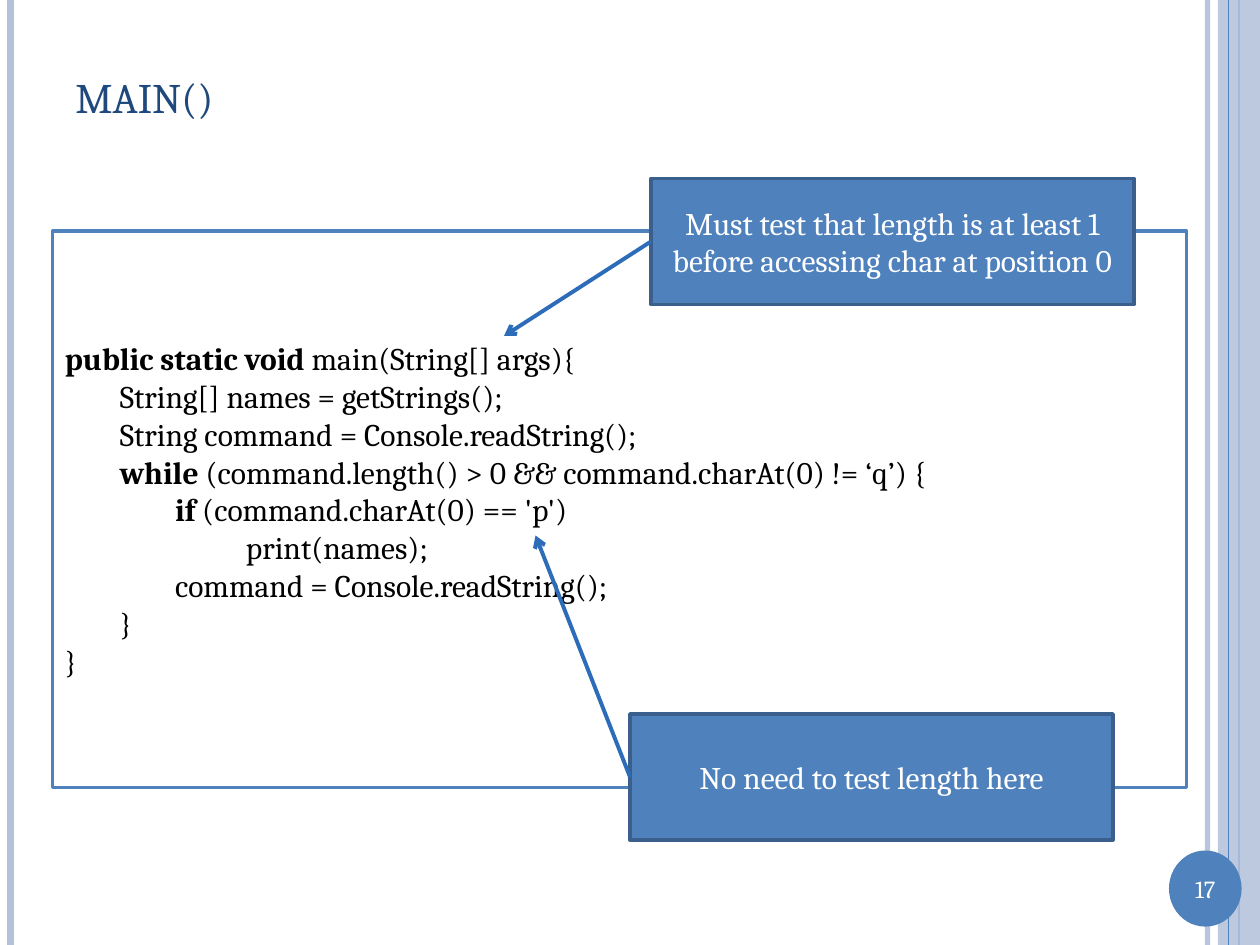
from dataclasses import dataclass

from pptx import Presentation
from pptx import util as u
from pptx.dml.color import RGBColor
from pptx.enum import shapes, text
from pptx.oxml.ns import qn
from lxml import etree

FONT = "Cambria"
COLOURS = {
    "white": "FFFFFF",
    "black": "000000",
    "title": "1F497D",
    "accent": "4F81BD",
    "pale": "B3C1DB",
    "border": "3A5F8C",
    "arrow": "2C6CB9",
}
PAGE_WIDTH, PAGE_HEIGHT = 720, 540


@dataclass
class Area:
    left: float
    top: float
    width: float
    height: float

    def lengths(self) -> list:
        return [u.Pt(n) for n in (self.left, self.top, self.width, self.height)]


@dataclass
class Stripe:
    x: float
    width: float
    colour: str
    opacity: int = 100


@dataclass
class CodeLine:
    indent: float
    keyword: str
    rest: str


@dataclass
class Callout:
    area: Area
    message: str
    target: tuple[float, float]


LEFT_STRIPES = [Stripe(690, 3, "pale", 93), Stripe(6, 4.5, "pale"), Stripe(708, 1.5, "accent")]
FRONT_STRIPE = Stripe(702, 0.75, "accent")
CODE = [
    CodeLine(0, "public static void", " main(String[] args){"),
    CodeLine(31.5, "", "String[] names = getStrings();"),
    CodeLine(31.5, "", "String command = Console.readString();"),
    CodeLine(31.5, "while", " (command.length() > 0 && command.charAt(0) != ‘q’) {"),
    CodeLine(63, "if", " (command.charAt(0) == 'p')"),
    CodeLine(103.5, "", "print(names);"),
    CodeLine(63, "", "command = Console.readString();"),
    CodeLine(31.5, "", "}"),
    CodeLine(0, "", "}"),
]
CALLOUTS = [
    Callout(Area(372, 102, 276, 72),
            "Must test that length is at least 1 before accessing char at position 0", (288, 192)),
    Callout(Area(360, 408, 276, 72), "No need to test length here", (306, 306)),
]


def colour_of(name: str) -> RGBColor:
    return RGBColor.from_string(COLOURS[name])


def set_opacity(element, percent: int) -> None:
    colour = element.find(".//" + qn("a:srgbClr"))
    etree.SubElement(colour, qn("a:alpha")).set("val", str(percent * 1000))


def add_line(page, start: tuple, end: tuple, colour: str, width: float):
    points = [u.Pt(n) for n in (*start, *end)]
    line = page.shapes.add_connector(shapes.MSO_CONNECTOR.STRAIGHT, *points)
    line.line.color.rgb = colour_of(colour)
    line.line.width = u.Pt(width)
    etree.SubElement(line._element.spPr, qn("a:effectLst"))
    return line


def add_stripe(page, stripe: Stripe) -> None:
    line = add_line(page, (stripe.x, 0), (stripe.x, PAGE_HEIGHT), stripe.colour, stripe.width)
    if stripe.opacity < 100:
        set_opacity(line._element.spPr, stripe.opacity)


def add_block(page, kind, area: Area, fill: str, border: str = ""):
    block = page.shapes.add_shape(kind, *area.lengths())
    block.shadow.inherit = False
    block.fill.solid()
    block.fill.fore_color.rgb = colour_of(fill)
    if border:
        block.line.color.rgb = colour_of(border)
        block.line.width = u.Pt(2)
    else:
        block.line.fill.background()
    return block


def style(para, size: float, colour: str, align=text.PP_ALIGN.LEFT) -> None:
    para.alignment = align
    para.font.name = FONT
    para.font.size = u.Pt(size)
    para.font.color.rgb = colour_of(colour)


def add_label(page, area: Area, words: str, size: float, colour: str, align=text.PP_ALIGN.LEFT):
    box = page.shapes.add_textbox(*area.lengths())
    box.text_frame.word_wrap = True
    box.text_frame.vertical_anchor = text.MSO_ANCHOR.MIDDLE
    para = box.text_frame.paragraphs[0]
    para.text = words
    style(para, size, colour, align)
    return para


def add_code(page, area: Area) -> None:
    panel = add_block(page, shapes.MSO_SHAPE.RECTANGLE, area, "white", "accent")
    frame = panel.text_frame
    for number, code in enumerate(CODE):
        para = frame.add_paragraph() if number else frame.paragraphs[0]
        style(para, 18, "black")
        para._p.get_or_add_pPr().set("marL", str(u.Pt(code.indent)))
        if code.keyword:
            span = para.add_run()
            span.text = code.keyword
            span.font.bold = True
        para.add_run().text = code.rest


def add_callout(page, callout: Callout) -> None:
    area = callout.area
    box = add_block(page, shapes.MSO_SHAPE.RECTANGLE, area, "accent", "border")
    para = box.text_frame.paragraphs[0]
    para.text = callout.message
    style(para, 18, "white", text.PP_ALIGN.CENTER)
    start = (area.left, area.top + area.height / 2)
    arrow = add_line(page, start, callout.target, "arrow", 2.25)
    arrow.begin_connect(box, 1)
    etree.SubElement(arrow.line._get_or_add_ln(), qn("a:tailEnd")).set("type", "arrow")


def main() -> None:
    deck = Presentation()
    deck.slide_width, deck.slide_height = u.Pt(PAGE_WIDTH), u.Pt(PAGE_HEIGHT)
    page = deck.slides.add_slide(deck.slide_layouts[6])

    for stripe in LEFT_STRIPES:
        add_stripe(page, stripe)
    band = add_block(page, shapes.MSO_SHAPE.RECTANGLE, Area(696, 0, 24, PAGE_HEIGHT), "pale")
    set_opacity(band._element.spPr, 87)
    add_stripe(page, FRONT_STRIPE)

    add_block(page, shapes.MSO_SHAPE.OVAL, Area(668, 486, 41.5, 43.5), "accent")
    add_label(page, Area(668, 495.5, 41.5, 24.5), "17", 14, "white", text.PP_ALIGN.CENTER)

    title = add_label(page, Area(36, 21.6, 624, 62.6), "main()", 30, "title")
    title.runs[0].font._element.set("cap", "small")

    add_code(page, Area(30, 132, 648, 318))
    for callout in CALLOUTS:
        add_callout(page, callout)

    deck.save("out.pptx")


if __name__ == "__main__":
    main()
